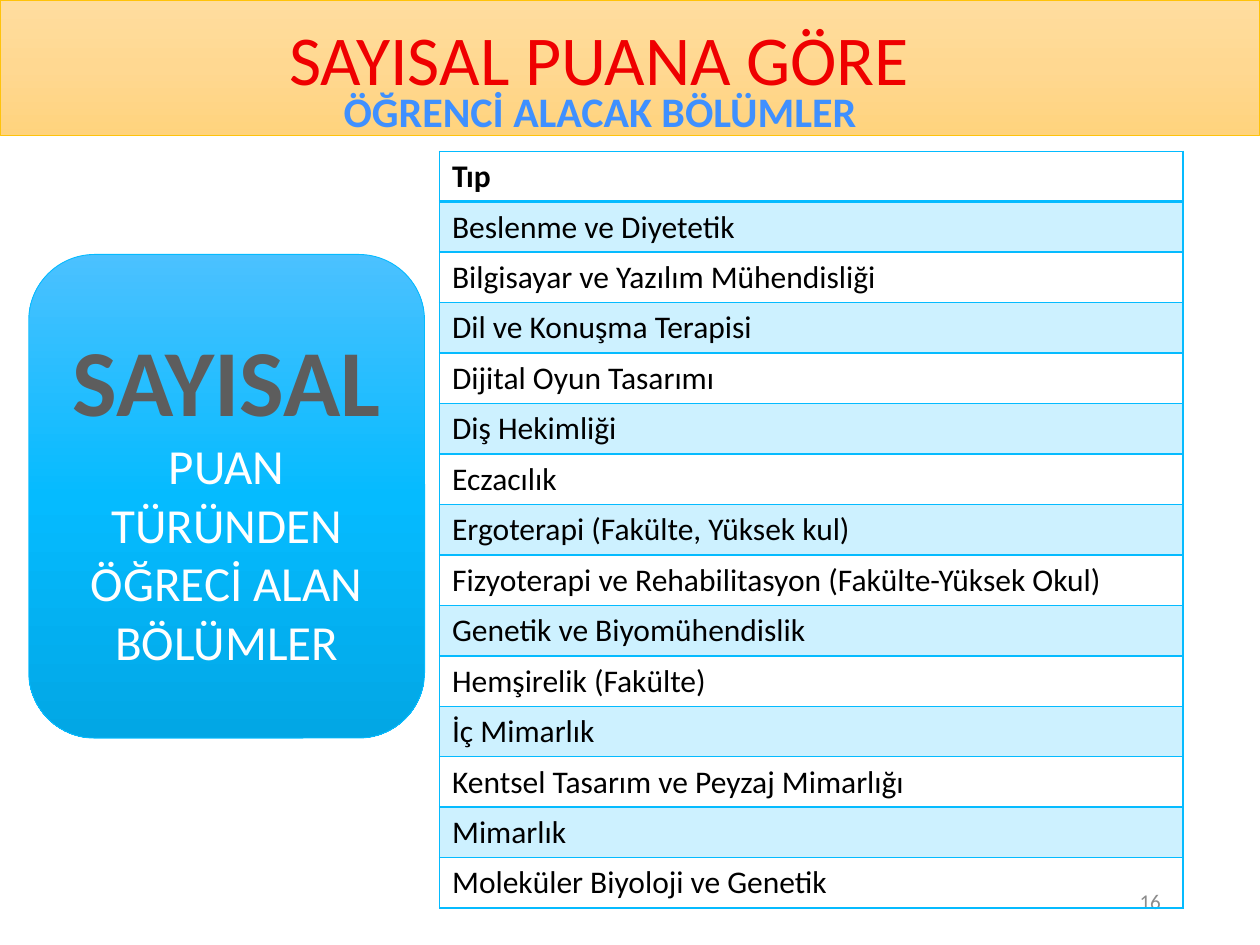
from copy import deepcopy

from lxml.etree import SubElement
from pptx import Presentation
from pptx.dml.color import RGBColor
from pptx.enum.shapes import MSO_SHAPE
from pptx.enum.text import MSO_ANCHOR, PP_ALIGN
from pptx.oxml.ns import qn
from pptx.util import Cm, Pt

BLUE = "05BBFF"
ROWS = [
    "Tıp",
    "Beslenme ve Diyetetik",
    "Bilgisayar ve Yazılım Mühendisliği",
    "Dil ve Konuşma Terapisi",
    "Dijital Oyun Tasarımı",
    "Diş Hekimliği",
    "Eczacılık",
    "Ergoterapi (Fakülte, Yüksek kul)",
    "Fizyoterapi ve Rehabilitasyon (Fakülte-Yüksek Okul)",
    "Genetik ve Biyomühendislik",
    "Hemşirelik (Fakülte)",
    "İç Mimarlık",
    "Kentsel Tasarım ve Peyzaj Mimarlığı",
    "Mimarlık",
    "Moleküler Biyoloji ve Genetik",
]


def tint(code):
    return RGBColor.from_string(code)


class Page:
    """Holds the style and the current slide, and draws each kind of element."""

    face = "Calibri"

    def __init__(self, slide):
        self.slide = slide

    def style(self, font, size, color, bold=False):
        font.name, font.size, font.bold = self.face, Pt(size), bold
        font.color.rgb = tint(color)

    def panel(self, kind, box, stops, edge):
        shape = self.slide.shapes.add_shape(kind, *map(Cm, box))
        shape.shadow.inherit = False
        shape.line.color.rgb = tint(edge)
        shape.line.width = Pt(0.5)
        fill = shape.fill
        fill.gradient()
        fill.gradient_angle = 270
        ramp = shape._element.spPr.find(".//" + qn("a:gsLst"))
        ramp.append(deepcopy(ramp[0]))
        for stop, color, place in zip(fill.gradient_stops, stops, (0, 0.5, 1)):
            stop.color.rgb = tint(color)
            stop.position = place
        return shape

    def label(self, box, text, size, color, bold=False,
              align=PP_ALIGN.CENTER, anchor=MSO_ANCHOR.TOP):
        frame = self.slide.shapes.add_textbox(*map(Cm, box)).text_frame
        frame.word_wrap = True
        frame.vertical_anchor = anchor
        para = frame.paragraphs[0]
        para.text, para.alignment = text, align
        self.style(para.font, size, color, bold)

    def border(self, cell, base):
        props = cell._tc.get_or_add_tcPr()
        for spot, side in enumerate("LRTB"):
            width = base if side == "B" else 1
            line = props.makeelement(qn(f"a:ln{side}"), w=str(Pt(width)))
            fill = SubElement(line, qn("a:solidFill"))
            SubElement(fill, qn("a:srgbClr"), val=BLUE)
            props.insert(spot, line)

    def table(self, box, rows):
        table = self.slide.shapes.add_table(len(rows), 1, *map(Cm, box)).table
        table.first_row = table.horz_banding = False
        for index, text in enumerate(rows):
            cell = table.cell(index, 0)
            para = cell.text_frame.paragraphs[0]
            para.text = text
            self.style(para.font, 18, "000000", index == 0)
            if index % 2:
                cell.fill.solid()
                cell.fill.fore_color.rgb = tint(BLUE)
                color = cell._tc.tcPr.find(".//" + qn("a:srgbClr"))
                SubElement(color, qn("a:alpha"), val="20000")
            else:
                cell.fill.background()
            self.border(cell, 1 if index else 2)


def main():
    deck = Presentation()
    deck.slide_width, deck.slide_height = Cm(25.4), Cm(19.05)
    page = Page(deck.slides.add_slide(deck.slide_layouts[6]))

    card = page.panel(MSO_SHAPE.ROUNDED_RECTANGLE, (0.58, 5.13, 7.98, 9.75),
                      ("4BC1FF", BLUE, "02A7E5"), BLUE)
    frame = card.text_frame
    frame.word_wrap = True
    frame.vertical_anchor = MSO_ANCHOR.MIDDLE
    para = frame.paragraphs[0]
    para.alignment = PP_ALIGN.CENTER
    for text, size, color, bold in (
        ("SAYISAL", 54, "5D5D5D", True),
        (" PUAN TÜRÜNDEN ÖĞRECİ ALAN BÖLÜMLER", 28, "FFFFFF", False),
    ):
        run = para.add_run()
        run.text = text
        page.style(run.font, size, color, bold)

    page.panel(MSO_SHAPE.RECTANGLE, (0, 0, 25.4, 2.74),
               ("FFDD9F", "FFD891", "FFD37D"), "FFC30B")
    page.label((-0.46, 0.18, 25.4, 3), "SAYISAL PUANA GÖRE ", 40, "EF0000")
    page.label((0.69, 1.6, 22.81, 1.27), "ÖĞRENCİ ALACAK BÖLÜMLER",
               24, "3F90FF", True)
    page.label((17.93, 17.65, 5.72, 1.02), "16", 12, "8C8C8C",
               align=PP_ALIGN.RIGHT, anchor=MSO_ANCHOR.MIDDLE)
    page.table((8.86, 3.05, 14.99, 15.24), ROWS)
    deck.save("out.pptx")


if __name__ == "__main__":
    main()
